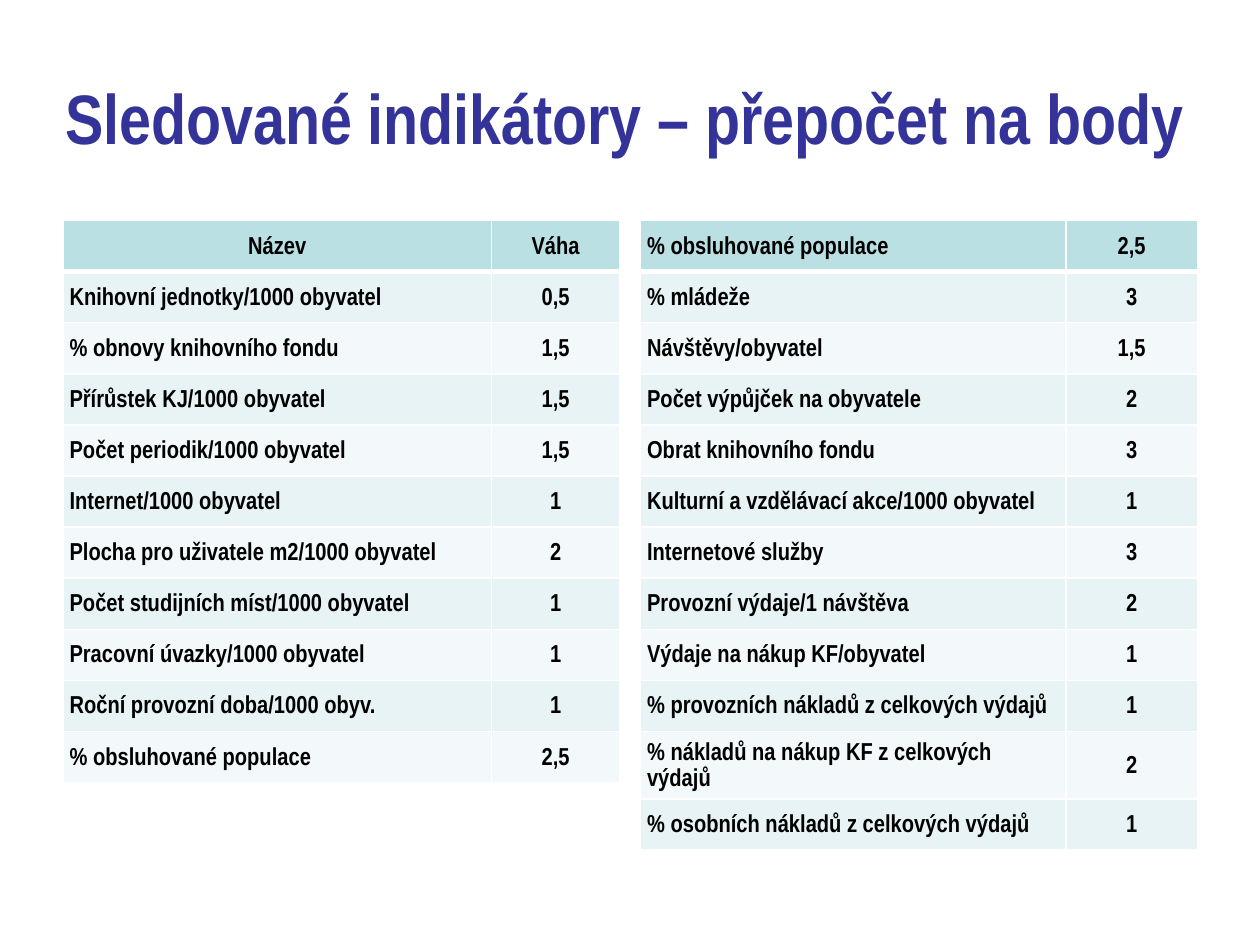
from lxml import etree
from pptx import Presentation
from pptx import util as u
from pptx.dml.color import RGBColor
from pptx.enum import text
from pptx.oxml import ns

HEADING = "Sledované indikátory – přepočet na body"
INDICATORS_LEFT = [
    ("Název", "Váha"),
    ("Knihovní jednotky/1000 obyvatel", "0,5"),
    ("% obnovy knihovního fondu", "1,5"),
    ("Přírůstek KJ/1000 obyvatel", "1,5"),
    ("Počet periodik/1000 obyvatel", "1,5"),
    ("Internet/1000 obyvatel", "1"),
    ("Plocha pro uživatele m2/1000 obyvatel", "2"),
    ("Počet studijních míst/1000 obyvatel", "1"),
    ("Pracovní úvazky/1000 obyvatel", "1"),
    ("Roční provozní doba/1000 obyv.", "1"),
    ("% obsluhované populace", "2,5"),
]
INDICATORS_RIGHT = [
    ("% obsluhované populace", "2,5"),
    ("% mládeže", "3"),
    ("Návštěvy/obyvatel", "1,5"),
    ("Počet výpůjček na obyvatele", "2"),
    ("Obrat knihovního fondu", "3"),
    ("Kulturní a vzdělávací akce/1000 obyvatel", "1"),
    ("Internetové služby", "3"),
    ("Provozní výdaje/1 návštěva", "2"),
    ("Výdaje na nákup KF/obyvatel", "1"),
    ("% provozních nákladů z celkových výdajů", "1"),
    ("% nákladů na nákup KF z celkových výdajů", "2"),
    ("% osobních nákladů z celkových výdajů", "1"),
]
THEME = {
    "font": "Arial Narrow", "heading_size": 40, "cell_size": 14,
    "heading": "333399", "ink": "000000", "rule": "FFFFFF",
    "header": "BBE0E3", "bands": ("E7F3F4", "F3F9FA"),
}
TABLES = [
    (INDICATORS_LEFT, 36, (244.8, 73.4), True),
    (INDICATORS_RIGHT, 366, (243.2, 75), False),
]
TABLE_TOP, ROW_HEIGHT, CELL_INSET = 126, 29.2, 3.75


def write(frame, words, *, size, color, centred=False, spacing=None):
    paragraph = frame.paragraphs[0]
    paragraph.alignment = text.PP_ALIGN.CENTER if centred else text.PP_ALIGN.LEFT
    if spacing:
        paragraph.line_spacing = spacing
    run = paragraph.add_run()
    run.text = words
    run.font.name = THEME["font"]
    run.font.size = u.Pt(size)
    run.font.bold = True
    run.font.color.rgb = RGBColor.from_string(color)


def add_borders(cell, widths):
    properties = cell._tc.get_or_add_tcPr()
    for position, (side, width) in enumerate(widths.items()):
        line = etree.Element(ns.qn(f"a:ln{side}"), w=str(int(u.Pt(width))))
        fill = etree.SubElement(line, ns.qn("a:solidFill"))
        etree.SubElement(fill, ns.qn("a:srgbClr"), val=THEME["rule"])
        properties.insert(position, line)


def add_indicators(slide, indicators, left, widths, has_titles):
    table = slide.shapes.add_table(
        len(indicators), len(widths), u.Pt(left), u.Pt(TABLE_TOP),
        u.Pt(sum(widths)), u.Pt(ROW_HEIGHT * len(indicators))).table
    for column, width in zip(table.columns, widths):
        column.width = u.Pt(width)
    for r, indicator in enumerate(indicators):
        table.rows[r].height = u.Pt(ROW_HEIGHT)
        band = THEME["bands"][(r - 1) % 2] if r else THEME["header"]
        for c, words in enumerate(indicator):
            cell = table.cell(r, c)
            cell.fill.solid()
            cell.fill.fore_color.rgb = RGBColor.from_string(band)
            cell.vertical_anchor = text.MSO_ANCHOR.MIDDLE
            cell.margin_left = cell.margin_right = u.Pt(CELL_INSET)
            cell.margin_top = cell.margin_bottom = 0
            write(cell.text_frame, words, size=THEME["cell_size"], color=THEME["ink"],
                  centred=c == 1 or (has_titles and r == 0), spacing=1.15)
            add_borders(cell, {"L": 1, "R": 1, "T": 3 if r == 1 else 1, "B": 1 if r else 3})


def main():
    deck = Presentation()
    deck.slide_width, deck.slide_height = u.Pt(720), u.Pt(540)
    slide = deck.slides.add_slide(deck.slide_layouts[6])

    heading = slide.shapes.add_textbox(u.Pt(9.4), u.Pt(21.6), u.Pt(694.8), u.Pt(90)).text_frame
    heading.word_wrap = True
    heading.vertical_anchor = text.MSO_ANCHOR.MIDDLE
    write(heading, HEADING, size=THEME["heading_size"], color=THEME["heading"], centred=True)

    for table in TABLES:
        add_indicators(slide, *table)
    deck.save("out.pptx")


if __name__ == "__main__":
    main()
